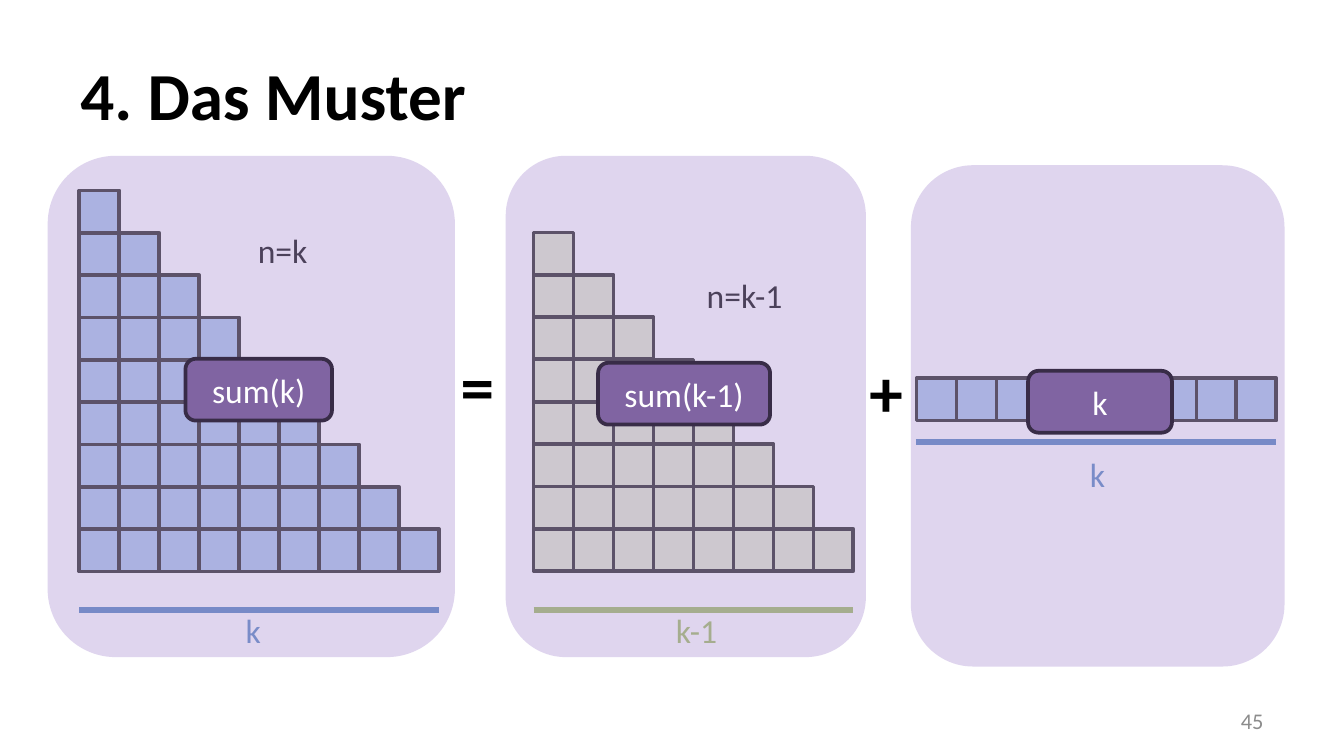
from dataclasses import dataclass
from typing import Iterable

from pptx import Presentation
from pptx.dml.color import RGBColor
from pptx.enum.shapes import MSO_CONNECTOR as Connector, MSO_SHAPE as Preset
from pptx.enum.text import MSO_ANCHOR as Anchor, PP_ALIGN as Align
from pptx.oxml.ns import qn
from pptx.oxml.xmlchemy import OxmlElement
from pptx.util import Pt

EMU_PER_PX = 2286  # 400 px to the inch
CELL_WIDTH, CELL_HEIGHT = 119, 126
K = 9


@dataclass(frozen=True)
class Theme:
    font: str = "Calibri"
    black: str = "000000"
    white: str = "FFFFFF"
    grey: str = "8C8C8C"
    blue_cell: str = "558ED5"
    green_cell: str = "C3D69B"
    cell_border: str = "1C1E19"
    blue_line: str = "4B7EBC"
    blue_text: str = "4F81BD"
    green: str = "9BBB59"
    panel: str = "B59CD8"
    badge: str = "8064A2"
    badge_border: str = "382C47"
    title_size: int = 36
    body_size: int = 18
    number_size: int = 12
    border_width: float = 2
    rule_width: float = 3.25
    cell_alpha: int = 53
    panel_alpha: int = 42


THEME = Theme()


@dataclass(frozen=True)
class Box:
    left: int
    top: int
    width: int
    height: int

    def emu(self) -> list[int]:
        return [px(n) for n in (self.left, self.top, self.width, self.height)]


@dataclass(frozen=True)
class Label:
    text: str
    box: Box
    color: str = THEME.black
    size: int = THEME.body_size
    bold: bool = False
    align: Align = Align.LEFT
    anchor: Anchor = Anchor.TOP


@dataclass(frozen=True)
class CellGroup:
    left: int
    top: int
    color: str
    cells: Iterable[tuple[int, int]]  # (column, row)


@dataclass(frozen=True)
class Rule:
    left: int
    top: int
    cells: int
    color: str


def px(length: int) -> int:
    return length * EMU_PER_PX


def rgb(color: str) -> RGBColor:
    return RGBColor.from_string(color)


def write_text(shape, label: Label) -> None:
    frame = shape.text_frame
    frame.word_wrap = True
    frame.vertical_anchor = label.anchor
    paragraph = frame.paragraphs[0]
    paragraph.alignment = label.align
    run = paragraph.add_run()
    run.text = label.text
    run.font.name = THEME.font
    run.font.size = Pt(label.size)
    run.font.bold = label.bold
    run.font.color.rgb = rgb(label.color)


def draw_label(slide, label: Label) -> None:
    write_text(slide.shapes.add_textbox(*label.box.emu()), label)


def draw_shape(shapes, preset: Preset, box: Box, fill: str, alpha: int = 100, border: str = ""):
    shape = shapes.add_shape(preset, *box.emu())
    shape.shadow.inherit = False
    shape.fill.solid()
    shape.fill.fore_color.rgb = rgb(fill)
    if alpha < 100:
        opacity = OxmlElement("a:alpha")
        opacity.set("val", str(alpha * 1000))
        shape.element.spPr.find(qn("a:solidFill"))[0].append(opacity)
    if border:
        shape.line.color.rgb = rgb(border)
        shape.line.width = Pt(THEME.border_width)
    else:
        shape.line.fill.background()
    return shape


def draw_cells(slide, group: CellGroup) -> None:
    shapes = slide.shapes.add_group_shape().shapes
    for column, row in group.cells:
        box = Box(group.left + column * CELL_WIDTH, group.top + row * CELL_HEIGHT,
                  CELL_WIDTH, CELL_HEIGHT)
        draw_shape(shapes, Preset.RECTANGLE, box, group.color, THEME.cell_alpha, THEME.cell_border)


def draw_rule(slide, rule: Rule) -> None:
    right = rule.left + rule.cells * CELL_WIDTH
    line = slide.shapes.add_connector(
        Connector.STRAIGHT, px(rule.left), px(rule.top), px(right), px(rule.top))
    line.line.color.rgb = rgb(rule.color)
    line.line.width = Pt(THEME.rule_width)
    line.element.spPr.append(OxmlElement("a:effectLst"))


def draw_badge(slide, text: str, box: Box) -> None:
    shape = draw_shape(slide.shapes, Preset.ROUNDED_RECTANGLE, box, THEME.badge,
                       border=THEME.badge_border)
    write_text(shape, Label(text, box, THEME.white, align=Align.CENTER, anchor=Anchor.MIDDLE))


def staircase(steps: int) -> list[tuple[int, int]]:
    return [(column, row) for row in range(steps) for column in range(row + 1)]


CELL_GROUPS = [
    CellGroup(236, 567, THEME.blue_cell, staircase(K)),
    CellGroup(1588, 692, THEME.green_cell, staircase(K - 1)),
    # The badge stands in for the middle of the last row
    CellGroup(2728, 1126, THEME.blue_cell, [(column, 0) for column in (0, 1, 2, 6, 7, 8)]),
]
RULES = [
    Rule(236, 1816, K, THEME.blue_line),
    Rule(2726, 1316, K, THEME.blue_line),
    Rule(1588, 1816, K - 1, THEME.green),
]
LABELS = [
    Label("4. Das Muster", Box(200, 92, 3600, 376), size=THEME.title_size, bold=True,
          anchor=Anchor.MIDDLE),
    Label("45", Box(2868, 2084, 932, 120), THEME.grey, THEME.number_size,
          align=Align.RIGHT, anchor=Anchor.MIDDLE),
    Label("=", Box(1332, 1004, 172, 284), size=THEME.title_size, bold=True),
    Label("+", Box(2548, 1024, 172, 284), size=THEME.title_size, bold=True),
    Label("k", Box(692, 1796, 156, 160), THEME.blue_text),
    Label("k-1", Box(1972, 1796, 220, 160), THEME.green),
    Label("k", Box(3204, 1332, 156, 160), THEME.blue_text),
    Label("n=k", Box(728, 664, 252, 160)),
    Label("n=k-1", Box(2064, 800, 364, 160)),
]
PANELS = [
    Box(142, 464, 1212, 1492),
    Box(1505, 464, 1072, 1492),
    Box(2711, 492, 1112, 1492),
]
BADGES = {
    "sum(k)": Box(552, 1068, 436, 184),
    "sum(k-1)": Box(1780, 1080, 512, 184),
    "k": Box(3060, 1104, 428, 184),
}


def main() -> None:
    presentation = Presentation()
    presentation.slide_width, presentation.slide_height = px(4000), px(2250)
    slide = presentation.slides.add_slide(presentation.slide_layouts[6])

    # Cells, rules and texts lie beneath the translucent panels
    for group in CELL_GROUPS:
        draw_cells(slide, group)
    for rule in RULES:
        draw_rule(slide, rule)
    for label in LABELS:
        draw_label(slide, label)

    # Panels and the badges on top of them
    for panel in PANELS:
        draw_shape(slide.shapes, Preset.ROUNDED_RECTANGLE, panel, THEME.panel, THEME.panel_alpha)
    for text, box in BADGES.items():
        draw_badge(slide, text, box)

    presentation.save("out.pptx")


if __name__ == "__main__":
    main()
